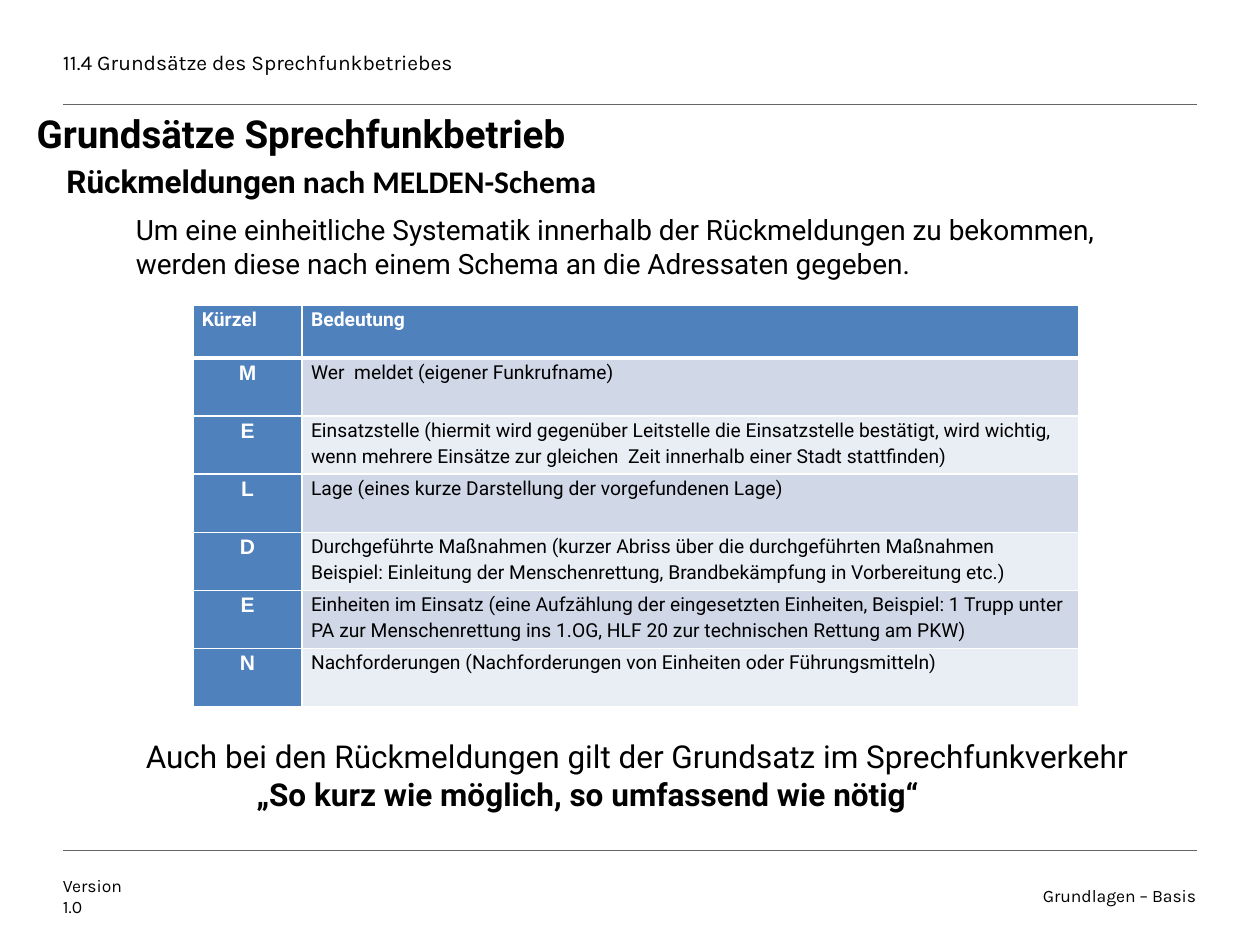
from lxml.etree import SubElement
from pptx import Presentation
from pptx.dml.color import RGBColor
from pptx.enum.shapes import MSO_CONNECTOR
from pptx.enum.text import MSO_ANCHOR, PP_ALIGN
from pptx.oxml.ns import qn
from pptx.util import Cm, Pt

MELDEN = [
    ("M", "Wer  meldet (eigener Funkrufname)"),
    ("E", "Einsatzstelle (hiermit wird gegenüber Leitstelle die Einsatzstelle bestätigt, "
          "wird wichtig, wenn mehrere Einsätze zur gleichen  Zeit innerhalb einer Stadt stattfinden)"),
    ("L", "Lage (eines kurze Darstellung der vorgefundenen Lage)"),
    ("D", "Durchgeführte Maßnahmen (kurzer Abriss über die durchgeführten Maßnahmen "
          "Beispiel: Einleitung der Menschenrettung, Brandbekämpfung in Vorbereitung etc.)"),
    ("E", "Einheiten im Einsatz (eine Aufzählung der eingesetzten Einheiten, Beispiel: "
          "1 Trupp unter PA zur Menschenrettung ins 1.OG, HLF 20 zur technischen Rettung am PKW)"),
    ("N", "Nachforderungen (Nachforderungen von Einheiten oder Führungsmitteln)"),
]


def color(hex_code):
    return RGBColor.from_string(hex_code)


class SlideBuilder:
    BLACK, WHITE, RULE = "000000", "FFFFFF", "646464"
    ACCENT, BANDS = "4F81BD", ("D0D8E8", "E9EDF4")
    BODY, FRAME, LETTER = "Roboto", "Karla", "Arial"

    def __init__(self, slide):
        self.slide = slide

    def style(self, paragraph, size, font, bold=False, ink=BLACK):
        paragraph.font.size = Pt(size)
        paragraph.font.name = font
        paragraph.font.bold = bold
        paragraph.font.color.rgb = color(ink)

    def text(self, lines, left, top, width, height, size, font=BODY, bold=False,
             align=PP_ALIGN.LEFT, anchor=MSO_ANCHOR.TOP, inset=True):
        """Add a text box with one paragraph per line and return its paragraphs."""
        box = self.slide.shapes.add_textbox(Cm(left), Cm(top), Cm(width), Cm(height))
        frame = box.text_frame
        frame.word_wrap = True
        frame.vertical_anchor = anchor
        if not inset:
            frame.margin_left = frame.margin_right = frame.margin_top = frame.margin_bottom = 0
        frame.text = "\n".join(lines)
        for paragraph in frame.paragraphs:
            paragraph.alignment = align
            self.style(paragraph, size, font, bold)
        return frame.paragraphs

    def frame_text(self, lines, left, top, width, height, size, align=PP_ALIGN.LEFT):
        """Add header or footer text."""
        self.text(lines, left, top, width, height, size, self.FRAME, align=align,
                  anchor=MSO_ANCHOR.MIDDLE, inset=False)

    def rule(self, left, right, y):
        line = self.slide.shapes.add_connector(
            MSO_CONNECTOR.STRAIGHT, Cm(left), Cm(y), Cm(right), Cm(y))
        line.line.width = Pt(0.25)
        line.line.color.rgb = color(self.RULE)
        SubElement(line._element.spPr, qn("a:effectLst"))

    def borders(self, cell, top=1, bottom=1):
        """Draw white cell borders; widths are in points."""
        properties = cell._tc.get_or_add_tcPr()
        for side, width in (("L", 1), ("R", 1), ("T", top), ("B", bottom)):
            edge = SubElement(properties, qn(f"a:ln{side}"), w=str(Pt(width)))
            fill = SubElement(edge, qn("a:solidFill"))
            SubElement(fill, qn("a:srgbClr"), val=self.WHITE)

    def cell(self, cell, words, fill, size, font, bold, ink, align=PP_ALIGN.LEFT):
        cell.margin_left = cell.margin_right = Cm(0.18)
        cell.margin_top = cell.margin_bottom = 0
        cell.fill.solid()
        cell.fill.fore_color.rgb = color(fill)
        cell.text = words
        paragraph = cell.text_frame.paragraphs[0]
        paragraph.alignment = align
        paragraph.line_spacing = 1.15
        self.style(paragraph, size, font, bold, ink)

    def table(self, header, rows, left, top, widths, header_height, row_height):
        total = header_height + row_height * len(rows)
        table = self.slide.shapes.add_table(
            len(rows) + 1, len(widths), Cm(left), Cm(top), Cm(sum(widths)), Cm(total)).table
        for column, width in zip(table.columns, widths):
            column.width = Cm(width)
        for index, row in enumerate(table.rows):
            row.height = Cm(row_height if index else header_height)
            for cell in row.cells:
                self.borders(cell, top=3 if index == 1 else 1, bottom=1 if index else 3)
        for column, title in enumerate(header):
            self.cell(table.cell(0, column), title, self.ACCENT, 11, self.BODY, True, self.WHITE)
        for index, (letter, meaning) in enumerate(rows):
            self.cell(table.cell(index + 1, 0), letter, self.ACCENT, 12, self.LETTER,
                      True, self.WHITE, PP_ALIGN.CENTER)
            self.cell(table.cell(index + 1, 1), meaning, self.BANDS[index % 2], 11, self.BODY,
                      False, self.BLACK)


def main():
    presentation = Presentation()
    presentation.slide_width, presentation.slide_height = Cm(25.4), Cm(19.05)
    builder = SlideBuilder(presentation.slides.add_slide(presentation.slide_layouts[6]))

    for y in (2.11, 17.15):
        builder.rule(1.27, 24.13, y)
    builder.frame_text(["11.4 Grundsätze des Sprechfunkbetriebes"], 1.27, 0.84, 15.44, 0.84, 12)
    builder.frame_text(["Version", "1.0"], 1.27, 17.5, 1.42, 1.12, 10)
    builder.frame_text(["Grundlagen – Basis"], 20.5, 17.5, 3.61, 1.12, 10, PP_ALIGN.RIGHT)

    title, = builder.text(["Grundsätze Sprechfunkbetrieb"], 0.74, 2.31, 18.75, 1.7, 22,
                          bold=True, inset=False)
    title.line_spacing = Pt(24)
    subtitle, = builder.text(["Rückmeldungen"], 1.09, 3.15, 13.79, 1.02, 18, bold=True)
    schema = subtitle.add_run()
    schema.text = " nach MELDEN-Schema"
    schema.font.name = "Calibri"
    builder.text(["Um eine einheitliche Systematik innerhalb der Rückmeldungen zu bekommen, "
                  "werden diese nach einem Schema an die Adressaten gegeben."],
                 2.49, 4.17, 20.6, 1.63, 16)

    builder.table(("Kürzel", "Bedeutung"), MELDEN, 3.89, 6.15, (2.2, 15.65), 1.07, 1.17)

    _, motto = builder.text(["Auch bei den Rückmeldungen gilt der Grundsatz im Sprechfunkverkehr",
                             "„So kurz wie möglich, so umfassend wie nötig“"],
                            2.69, 14.73, 21.59, 1.8, 18)
    motto.font.bold = True
    motto._p.get_or_add_pPr().set("marL", str(Cm(2.23)))

    presentation.save("out.pptx")


if __name__ == "__main__":
    main()
